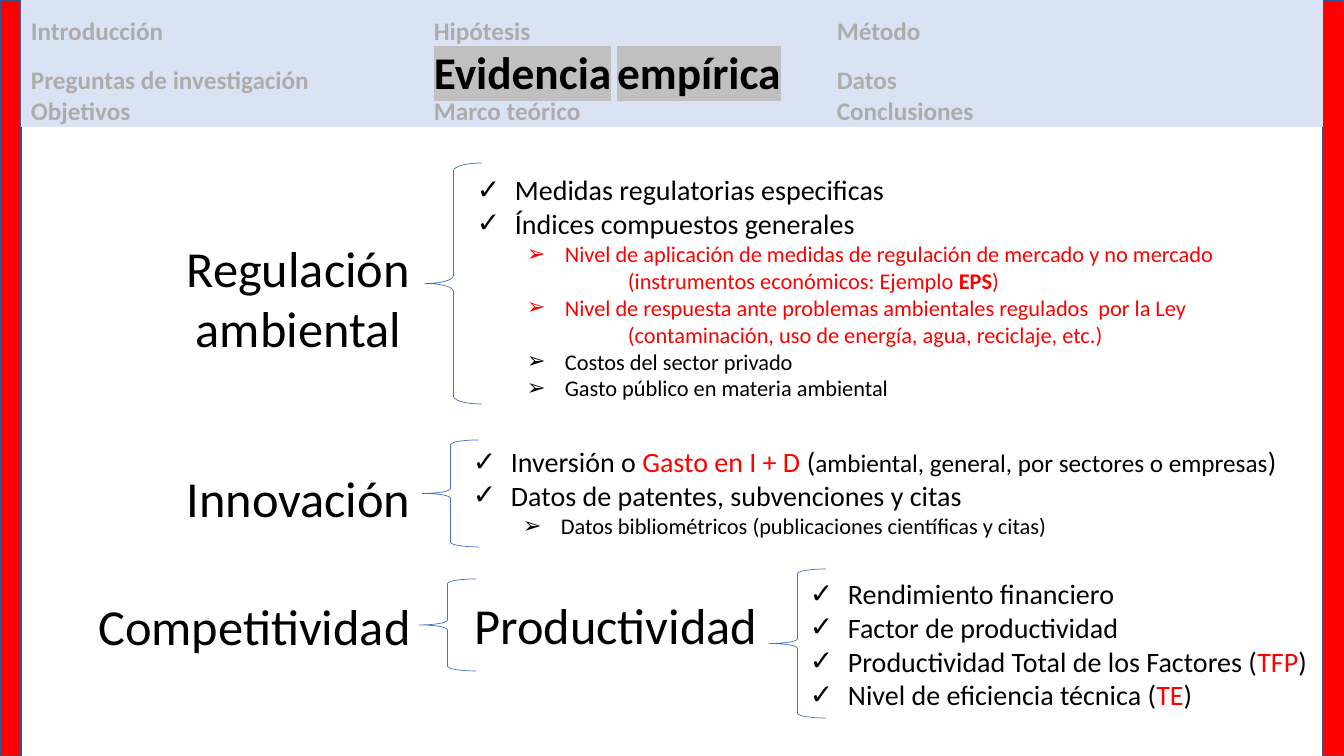
import pptx
import pptx.dml.color
import pptx.enum.shapes
import pptx.enum.text
import pptx.oxml.ns
import pptx.util
from lxml import etree

SHAPES = pptx.enum.shapes.MSO_SHAPE
ALIGN = pptx.enum.text.PP_ALIGN
EMU_PER_PX = 914400 / 100.8
FONT = "Calibri"
BLACK, RED, GRAY = "000000", "FF0000", "AFABAB"
BLUE, NAVY, PALE, SILVER = "4472C4", "325491", "DAE3F3", "C0C0C0"


def px(length):
    return pptx.util.Emu(round(length * EMU_PER_PX))


def rgb(value):
    return pptx.dml.color.RGBColor.from_string(value)


def add_xml(parent, tag, **attributes):
    return etree.SubElement(parent, pptx.oxml.ns.qn(tag), attributes)


def add_span(para, text, size, color=BLACK, bold=None, highlight=None):
    span = para.add_run()
    span.text = text
    span.font.size = pptx.util.Pt(size)
    span.font.bold = bold
    span.font.color.rgb = rgb(color)
    if highlight:
        mark = etree.Element(pptx.oxml.ns.qn("a:highlight"))
        add_xml(mark, "a:srgbClr", val=highlight)
        span.font.fill._xPr.find(pptx.oxml.ns.qn("a:solidFill")).addnext(mark)


def add_shape(page, kind, box, fill=None, line=None, width=1):
    shape = page.shapes.add_shape(kind, *map(px, box))
    shape.shadow.inherit = False
    if fill:
        shape.fill.solid()
        shape.fill.fore_color.rgb = rgb(fill)
    else:
        shape.fill.background()
    if line:
        shape.line.color.rgb = rgb(line)
        shape.line.width = pptx.util.Pt(width)
    else:
        shape.line.fill.background()
    return shape


def add_text_frame(page, box, wrap=False):
    frame = page.shapes.add_textbox(*map(px, box)).text_frame
    frame.word_wrap = wrap
    frame.auto_size = pptx.enum.text.MSO_AUTO_SIZE.SHAPE_TO_FIT_TEXT
    return frame


def next_para(frame, index):
    return frame.add_paragraph() if index else frame.paragraphs[0]


# Large topic names
def topic_label(page, box, text, wrap=False):
    para = add_text_frame(page, box, wrap).paragraphs[0]
    para.alignment = ALIGN.CENTER
    para.font.name = FONT
    add_span(para, text, 36)


# Bulleted lists: each style gives margin, hanging indent, bullet and size
STYLES = {
    "check": (38, -38, "✓", 20),
    "arrow": (88, -38, "➢", 16),
    "detail": (151, 0, None, 16),
}


def checklist(page, box, items):
    frame = add_text_frame(page, box)
    for index, (style, *spans) in enumerate(items):
        margin, indent, bullet, size = STYLES[style]
        para = next_para(frame, index)
        para.alignment = ALIGN.LEFT
        layout = para._p.get_or_add_pPr()
        layout.set("marL", str(px(margin)))
        layout.set("indent", str(px(indent)))
        if bullet:
            add_xml(layout, "a:buFont", typeface="Arial")
            add_xml(layout, "a:buChar", char=bullet)
        para.font.name = FONT
        for text, options in spans:
            add_span(para, text, **{"size": size, **options})


# A brace fills the box; its content starts at an offset inside it
def brace_group(page, box, offset, size, place_content, content, bend=0.0833):
    left, top, _, _ = box
    brace = add_shape(page, SHAPES.LEFT_BRACE, box, line=BLUE, width=0.5)
    brace.adjustments[0] = bend
    place_content(page, (left + offset[0], top + offset[1], *size), content)


# Header with the section names in three columns
def header(page, box):
    off = {"size": 18, "color": GRAY, "bold": True}
    current = {"size": 32.4, "bold": True, "highlight": SILVER}
    tall_tab = {"size": 32.4, "bold": True}
    rows = [
        [("Introducción", off), ("\t", tall_tab), ("Hipótesis", off),
         ("\t", tall_tab), ("Método", off)],
        [("Preguntas de investigación\t", off), ("Evidencia", current),
         (" ", off), ("empírica", current), ("\tDatos", off)],
        [("Objetivos\tMarco teórico\tConclusiones", off)],
    ]
    frame = add_shape(page, SHAPES.RECTANGLE, box, fill=PALE).text_frame
    frame.word_wrap = True
    frame.vertical_anchor = pptx.enum.text.MSO_ANCHOR.MIDDLE
    for index, row in enumerate(rows):
        para = next_para(frame, index)
        para.alignment = ALIGN.LEFT
        para.line_spacing = 0.9
        stops = add_xml(para._p.get_or_add_pPr(), "a:tabLst")
        for column in (1, 2):
            add_xml(stops, "a:tab", pos=str(px(403 * column)), algn="l")
        para.font.name = FONT
        for text, options in row:
            add_span(para, text, **options)


# Red bars on both edges
def side_bars(page, box, width):
    left, top, full_width, height = box
    for bar_left in (left, left + full_width - width):
        add_shape(page, SHAPES.RECTANGLE, (bar_left, top, width, height),
                  fill=RED, line=NAVY)


RED_TEXT = {"color": RED}
REGULATION = [
    ("check", ("Medidas regulatorias especificas", {})),
    ("check", ("Índices compuestos generales", {})),
    ("arrow", ("Nivel de aplicación de medidas de regulación de mercado "
               "y no mercado", RED_TEXT)),
    ("detail", ("(instrumentos económicos: Ejemplo ", RED_TEXT),
     ("EPS", {"color": RED, "bold": True}), (")", RED_TEXT)),
    ("arrow", ("Nivel de respuesta ante problemas ambientales regulados  "
               "por la Ley", RED_TEXT)),
    ("detail", ("(contaminación, uso de energía, agua, reciclaje, etc.)",
                RED_TEXT)),
    ("arrow", ("Costos del sector privado", {})),
    ("arrow", ("Gasto público en materia ambiental", {})),
]
INNOVATION = [
    ("check", ("Inversión o ", {}), ("Gasto en I + D ", RED_TEXT), ("(", {}),
     ("ambiental, general, por sectores o empresas", {"size": 18}), (")", {})),
    ("check", ("Datos de patentes, subvenciones y citas", {})),
    ("arrow", ("Datos bibliométricos (publicaciones científicas y citas)",
               {})),
]
PRODUCTIVITY = [
    ("check", ("Rendimiento financiero", {})),
    ("check", ("Factor de productividad", {})),
    ("check", ("Productividad Total de los Factores (", {}),
     ("TFP", RED_TEXT), (")", {})),
    ("check", ("Nivel de eficiencia técnica (", {}), ("TE", RED_TEXT),
     (")", {})),
]


def main():
    deck = pptx.Presentation()
    deck.slide_width, deck.slide_height = px(1344), px(756)
    page = deck.slides.add_slide(deck.slide_layouts[6])

    side_bars(page, (0, 0, 1344, 756), 21)
    header(page, (21, 0, 1302, 127))

    topic_label(page, (130, 232, 337, 132), "Regulación ambiental", wrap=True)
    brace_group(page, (425, 163, 57, 241), (42, 5), (766, 241),
                checklist, REGULATION, bend=0.136)

    topic_label(page, (175, 462, 247, 72), "Innovación")
    brace_group(page, (422, 440, 57, 107), (41, 0), (832, 105),
                checklist, INNOVATION)

    topic_label(page, (86, 590, 337, 72), "Competitividad")
    brace_group(page, (419, 579, 57, 92), (44, 10), (306, 72),
                topic_label, "Productividad")
    brace_group(page, (769, 569, 57, 149), (31, 3), (525, 146),
                checklist, PRODUCTIVITY)

    deck.save("out.pptx")


if __name__ == "__main__":
    main()
